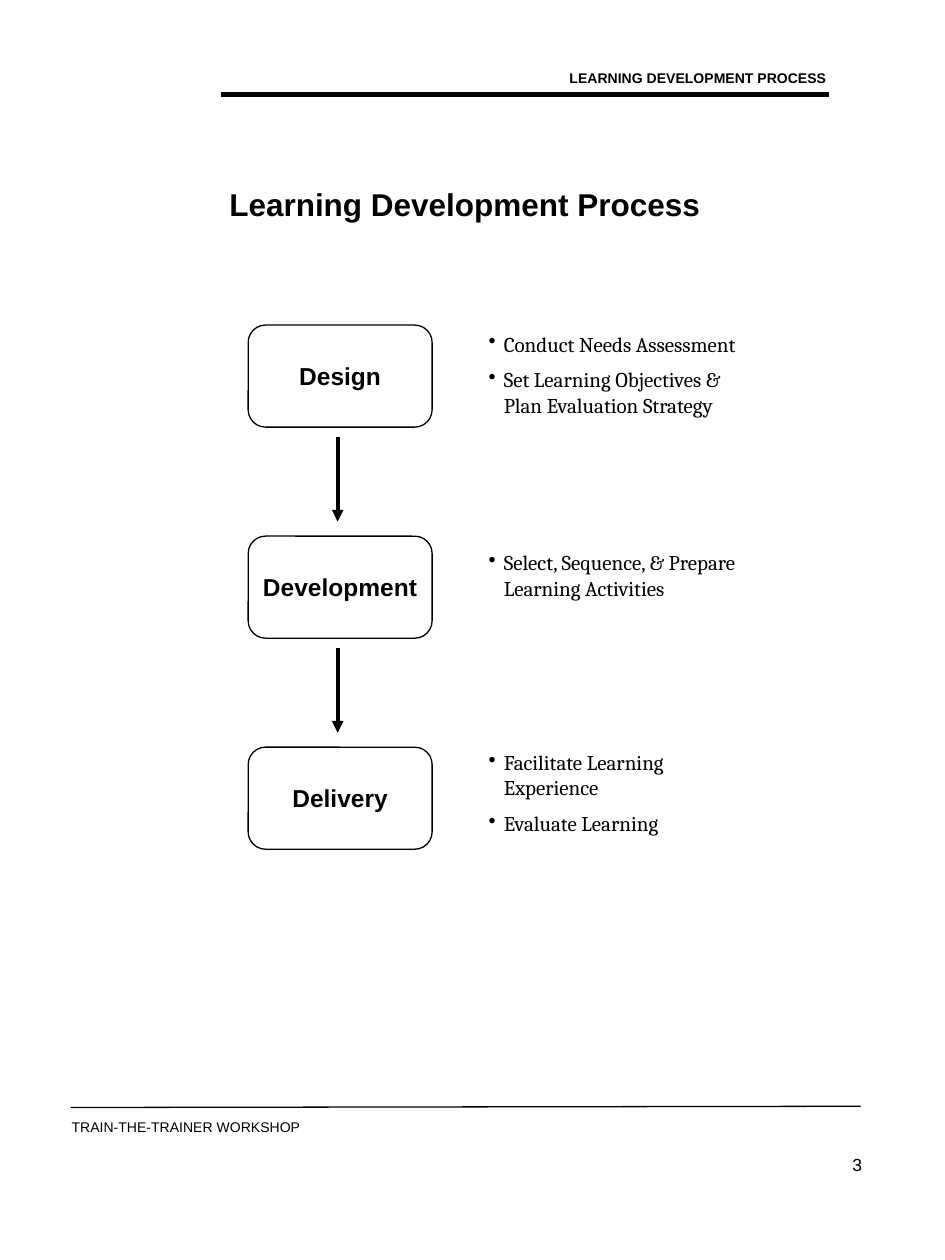
from pptx import Presentation
from pptx import util as u
from pptx.dml import color
from pptx.enum import shapes, text
from pptx.oxml import ns
from lxml import etree

COLUMNS, ROWS = 75, 100
CELL = u.Inches(0.1)
INK, PAPER = "000000", "FFFFFF"
BULLET_INDENT = u.Inches(0.12)
STEP_PITCH = 16.75
STEPS = [
    ("Design", 0, ["Conduct Needs Assessment",
                   "Set Learning Objectives & Plan Evaluation Strategy"]),
    ("Development", 0.6, ["Select, Sequence, & Prepare Learning Activities"]),
    ("Delivery", -0.3, ["Facilitate Learning Experience", "Evaluate Learning"]),
]


def cells(*counts):
    """Convert counts of grid cells to lengths."""
    return [round(count * CELL) for count in counts]


def rgb(value):
    """Turn a hex string into a colour."""
    return color.RGBColor.from_string(value)


def assign(target, values):
    """Set each attribute named in a dict of format values."""
    for name, value in values.items():
        setattr(target, name, value)


def add_element(parent, tag, **attributes):
    """Append a DrawingML element to a parent."""
    return etree.SubElement(parent, ns.qn(tag), attributes)


def write(shape, lines, size, bold=False, font="Arial", align="LEFT",
          anchor="TOP", wrap=True, bullets=False):
    """Fill a shape with formatted paragraphs."""
    frame = shape.text_frame
    frame.text = "\n".join(lines)
    assign(frame, {"word_wrap": wrap, "auto_size": text.MSO_AUTO_SIZE.NONE,
                   "vertical_anchor": getattr(text.MSO_ANCHOR, anchor)})
    for index, paragraph in enumerate(frame.paragraphs):
        assign(paragraph, {"alignment": getattr(text.PP_ALIGN, align),
                           "space_before": u.Pt(size / 2 if index else 0)})
        if bullets:
            properties = paragraph._p.get_or_add_pPr()
            properties.set("marL", str(BULLET_INDENT))
            properties.set("indent", str(-BULLET_INDENT))
            add_element(properties, "a:buChar", char="•")
        assign(paragraph.font, {"name": font, "size": u.Pt(size), "bold": bold})
        paragraph.font.color.rgb = rgb(INK)


def add_text(slide, box, lines, size, **format_values):
    """Add a text box at a grid box."""
    shape = slide.shapes.add_textbox(*cells(*box))
    write(shape, lines, size, **format_values)


def add_line(slide, ends, width, arrow=False):
    """Add a straight line, with an arrowhead at its end if asked."""
    connector = slide.shapes.add_connector(
        shapes.MSO_CONNECTOR.STRAIGHT, *cells(*ends))
    connector.line.color.rgb = rgb(INK)
    connector.line.width = u.Pt(width)
    if arrow:
        add_element(connector.line._get_or_add_ln(), "a:tailEnd", type="triangle")
    add_element(connector._element.spPr, "a:effectLst")


def add_header(slide, box):
    """Place the running head above its thick rule."""
    left, top, width, height = box
    add_line(slide, (left, top + 2.5, left + width, top + 2.5), 3)
    add_text(slide, (left + width - 22.5, top, 23.3, height),
             ["LEARNING DEVELOPMENT PROCESS"], 8, bold=True, align="RIGHT")


def add_title(slide, box):
    """Move and format the title placeholder."""
    title = slide.shapes.title
    assign(title, dict(zip(("left", "top", "width", "height"), cells(*box))))
    write(title, ["Learning Development Process"], 18, bold=True, anchor="MIDDLE")


def add_step(slide, box, name, shift, points):
    """Place one step box with its bullet list on the right."""
    left, top, width, height = box
    shape = slide.shapes.add_shape(
        shapes.MSO_SHAPE.ROUNDED_RECTANGLE, *cells(*box))
    shape.adjustments[0] = 0.17
    shape.shadow.inherit = False
    shape.fill.solid()
    shape.fill.fore_color.rgb = rgb(PAPER)
    shape.line.color.rgb = rgb(INK)
    shape.line.width = u.Pt(0.75)
    write(shape, [name], 14, bold=True, align="CENTER", anchor="MIDDLE", wrap=False)
    add_text(slide, (left + 18.1, top + shift, 22.2, height), points, 12,
             font="Cambria", bullets=True)


def add_process(slide, box):
    """Stack the steps downwards and join them with arrows."""
    left, top, width, height = box
    for index, (name, shift, points) in enumerate(STEPS):
        step_top = top + index * STEP_PITCH
        add_step(slide, (left, step_top, width, height), name, shift, points)
        if index < len(STEPS) - 1:
            middle = left + width / 2 - 0.2
            add_line(slide, (middle, step_top + 8.9, middle, step_top + 15.6),
                     2.25, arrow=True)


def add_footer(slide, box):
    """Place the thin rule, the workshop name and the page number."""
    left, top, width, height = box
    add_line(slide, (left, top + 0.1, left + width, top), 0.75)
    add_text(slide, (left - 0.9, top + 0.5, 35, 2.3),
             ["TRAIN-THE-TRAINER WORKSHOP"], 8)
    add_text(slide, (left + width - 14.5, top + 3.3, 15.6, height - 3.3),
             ["3"], 10, align="RIGHT")


def main():
    """Build the slide and save it."""
    presentation = Presentation()
    assign(presentation, {"slide_width": COLUMNS * CELL,
                          "slide_height": ROWS * CELL})
    slide = presentation.slides.add_slide(presentation.slide_layouts[5])
    add_header(slide, (17.5, 5, 48.3, 2.3))
    add_title(slide, (17.2, 15.3, 41.7, 1.7))
    add_process(slide, (19.7, 25.8, 14.6, 8.1))
    add_footer(slide, (5.6, 87.8, 62.7, 10))
    presentation.save("out.pptx")


if __name__ == "__main__":
    main()
